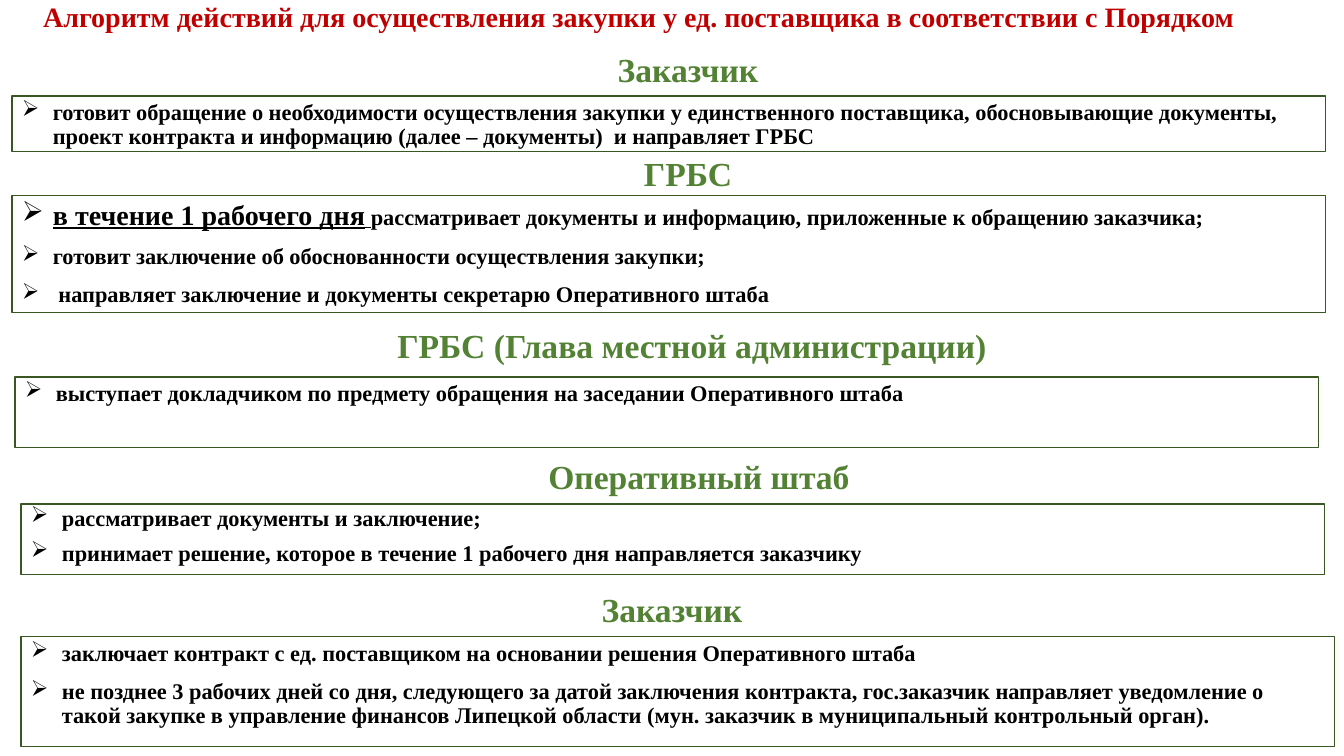
from dataclasses import dataclass

from lxml.etree import SubElement
from pptx import Presentation
from pptx.dml.color import RGBColor
from pptx.enum.shapes import MSO_SHAPE as Shape
from pptx.enum.text import MSO_ANCHOR as Anchor
from pptx.enum.text import MSO_AUTO_SIZE as AutoSize
from pptx.enum.text import PP_ALIGN as Align
from pptx.oxml.ns import qn
from pptx.util import Emu, Pt

PX = 914400 / 100.8


@dataclass(frozen=True)
class Theme:
    font: str = "Times New Roman"
    title_color: str = "C00000"
    heading_color: str = "548235"
    text_color: str = "000000"
    border_color: str = "385723"
    title_size: int = 20
    heading_size: int = 24
    text_size: int = 16
    accent_size: int = 20
    space_before: int = 10
    border_width: float = 0.75
    bullet: str = "➢"
    bullet_indent: int = 31


THEME = Theme()
HEADING_SIZE = (1008, 46)
ACCENT = {"size": Pt(THEME.accent_size), "underline": True}
UNDERLINED = {"underline": True}

TITLE = "Алгоритм действий для осуществления закупки у ед. поставщика в соответствии с Порядком"

# Heading, its left and top, box (left, top, width, height), line spacing,
# and steps; a step is a list of (text, format) runs.
SECTIONS = [
    ("Заказчик", (184, 48), (12, 96, 1314, 56), 0.9, [
        [("готовит обращение о необходимости осуществления закупки у единственного "
          "поставщика, обосновывающие документы, проект контракта и информацию "
          "(далее – документы)  и направляет ГРБС", {})],
    ]),
    ("ГРБС", (184, 152), (12, 196, 1314, 117), 0.9, [
        [("в течение 1 рабочего дня", ACCENT),
         (" ", UNDERLINED),
         ("рассматривает документы и информацию, приложенные к обращению заказчика;", {})],
        [("готовит заключение об обоснованности осуществления закупки;", {})],
        [(" направляет заключение и документы секретарю Оперативного штаба", {})],
    ]),
    ("ГРБС (Глава местной администрации)", (188, 325), (15, 377, 1304, 71), 0.9, [
        [("выступает докладчиком по предмету обращения на заседании Оперативного штаба", {})],
    ]),
    ("Оперативный штаб", (195, 456), (21, 504, 1304, 71), 0.8, [
        [("рассматривает документы и заключение;", {})],
        [("принимает решение, которое в течение 1 рабочего дня направляется заказчику", {})],
    ]),
    ("Заказчик", (168, 588), (21, 637, 1314, 110), 0.9, [
        [("заключает контракт с ед. поставщиком на основании решения Оперативного штаба", {})],
        [("не позднее 3 рабочих дней со дня, следующего за датой заключения контракта, "
          "гос.заказчик направляет уведомление о такой закупке в управление финансов "
          "Липецкой области (мун. заказчик в муниципальный контрольный орган).", {})],
    ]),
]


def px(length):
    return Emu(round(length * PX))


def apply_format(target, values):
    for name, value in values.items():
        setattr(target, name, value)


def place(shape, box):
    apply_format(shape, dict(zip(("left", "top", "width", "height"), map(px, box))))


def prepare_frame(shape, anchor):
    frame = shape.text_frame
    apply_format(frame, {"word_wrap": True, "auto_size": AutoSize.NONE,
                         "vertical_anchor": anchor})
    return frame


def add_run(paragraph, text, size, color, **extra):
    run = paragraph.add_run()
    run.text = text
    apply_format(run.font, {"name": THEME.font, "size": Pt(size), "bold": True, **extra})
    run.font.color.rgb = RGBColor.from_string(color)


def add_bullet(paragraph):
    properties = paragraph._p.get_or_add_pPr()
    indent = px(THEME.bullet_indent)
    properties.set("marL", str(indent))
    properties.set("indent", str(-indent))
    SubElement(properties, qn("a:buChar")).set("char", THEME.bullet)


def write_line(shape, box, text, size, color, anchor, space_before):
    """Place a shape and fill it with one centred line."""
    place(shape, box)
    paragraph = prepare_frame(shape, anchor).paragraphs[0]
    apply_format(paragraph, {"alignment": Align.CENTER, "line_spacing": 0.9,
                             "space_before": Pt(space_before)})
    add_run(paragraph, text, size, color)


def add_steps_box(slide, box, line_spacing, steps):
    shape = slide.shapes.add_shape(Shape.RECTANGLE, *map(px, box))
    shape.shadow.inherit = False
    shape.fill.background()
    shape.line.color.rgb = RGBColor.from_string(THEME.border_color)
    shape.line.width = Pt(THEME.border_width)
    frame = prepare_frame(shape, Anchor.TOP)
    for index, runs in enumerate(steps):
        paragraph = frame.add_paragraph() if index else frame.paragraphs[0]
        apply_format(paragraph, {"alignment": Align.LEFT, "line_spacing": line_spacing,
                                 "space_before": Pt(THEME.space_before)})
        add_bullet(paragraph)
        for text, values in runs:
            add_run(paragraph, text, **{"size": THEME.text_size,
                                        "color": THEME.text_color,
                                        **run_format(values)})


def run_format(values):
    """Give sizes as plain points, as add_run expects them."""
    return {name: value.pt if name == "size" else value for name, value in values.items()}


def main():
    presentation = Presentation()
    presentation.slide_width, presentation.slide_height = px(1344), px(756)
    slide = presentation.slides.add_slide(presentation.slide_layouts[0])

    write_line(slide.shapes.title, (21, -1, 1236, 40), TITLE,
               THEME.title_size, THEME.title_color, Anchor.BOTTOM, 0)

    for index, (heading, corner, box, line_spacing, steps) in enumerate(SECTIONS):
        heading_box = (*corner, *HEADING_SIZE)
        shape = (slide.shapes.add_textbox(*map(px, heading_box)) if index
                 else slide.placeholders[1])
        write_line(shape, heading_box, heading, THEME.heading_size,
                   THEME.heading_color, Anchor.TOP, THEME.space_before)
        add_steps_box(slide, box, line_spacing, steps)

    presentation.save("out.pptx")


if __name__ == "__main__":
    main()
